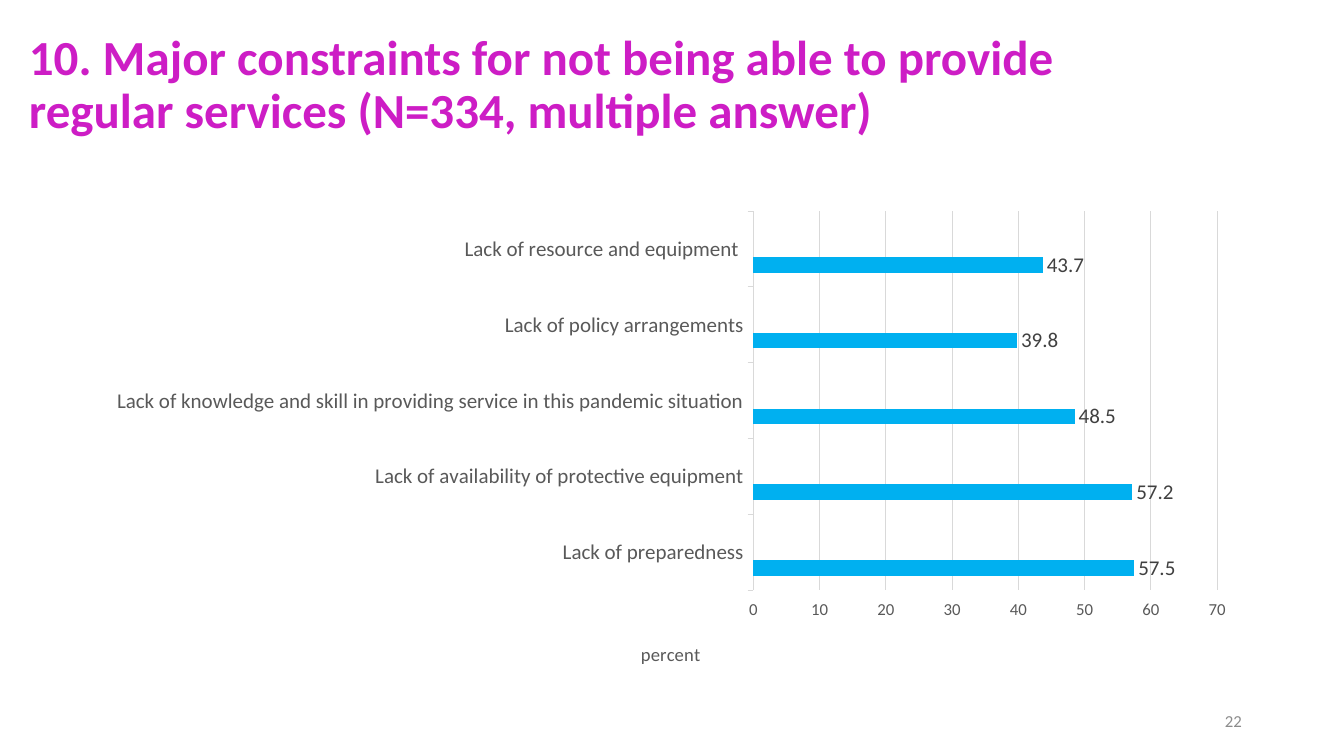
"""Build a slide charting the constraints on providing regular services."""
from dataclasses import dataclass

from lxml.etree import SubElement
from pptx import Presentation
from pptx.chart.data import CategoryChartData as ChartData
from pptx.dml.color import RGBColor
from pptx.enum.chart import XL_CHART_TYPE as ChartType
from pptx.enum.chart import XL_LABEL_POSITION as LabelPosition
from pptx.enum.chart import XL_TICK_MARK as TickMark
from pptx.enum.text import MSO_ANCHOR as Anchor
from pptx.enum.text import PP_ALIGN as Align
from pptx.oxml.ns import qn
from pptx.util import Cm, Pt

FONT = "Calibri"
COLORS = {
    "heading": "CD1DC5", "axis": "595959", "grid": "D9D9D9",
    "label": "404040", "page": "8C8C8C",
    "Series 1": "00B0F0", "Series 2": "ED7D31", "Series 3": "A5A5A5",
}
CONSTRAINTS = {
    "Lack of preparedness": 57.5,
    "Lack of availability of protective equipment": 57.2,
    "Lack of knowledge and skill in providing service in this pandemic situation": 48.5,
    "Lack of policy arrangements": 39.8,
    "Lack of resource and equipment ": 43.7,
}


@dataclass(frozen=True)
class Caption:
    text: str
    left: float
    top: float
    width: float
    height: float
    size: float
    color: str
    bold: bool = False
    align: Align = Align.LEFT
    spacing: float = 1.0


CAPTIONS = [
    Caption("10. Major constraints for not being able to provide regular services "
            "(N=334, multiple answer)", 0.48, 0.33, 29.21, 3.68, 35, "heading",
            bold=True, spacing=0.9),
    Caption("22", 23.93, 17.65, 7.62, 1.02, 12, "page", align=Align.RIGHT),
]


def rgb(name: str) -> RGBColor:
    return RGBColor.from_string(COLORS[name])


def style_font(font, size: float, color: str, bold: bool = False) -> None:
    font.name, font.size, font.bold = FONT, Pt(size), bold
    font.color.rgb = rgb(color)


def style_line(line, color: str) -> None:
    line.width = Pt(0.75)
    line.color.rgb = rgb(color)


def add_caption(slide, caption: Caption) -> None:
    box = slide.shapes.add_textbox(Cm(caption.left), Cm(caption.top),
                                   Cm(caption.width), Cm(caption.height))
    frame = box.text_frame
    frame.word_wrap = True
    frame.vertical_anchor = Anchor.MIDDLE
    paragraph = frame.paragraphs[0]
    paragraph.alignment = caption.align
    paragraph.line_spacing = caption.spacing
    run = paragraph.add_run()
    run.text = caption.text
    style_font(run.font, caption.size, caption.color, caption.bold)


def place(element, position: int, **settings) -> None:
    for old in element.findall(qn("c:layout")):
        element.remove(old)
    layout = SubElement(element, qn("c:layout"))
    manual = SubElement(layout, qn("c:manualLayout"))
    for tag, value in settings.items():
        SubElement(manual, qn(f"c:{tag}")).set("val", str(value))
    element.insert(position, layout)


def add_constraints_chart(slide) -> None:
    data = ChartData()
    data.categories = list(CONSTRAINTS)
    data.add_series("Series 1", list(CONSTRAINTS.values()))
    for name in ("Series 2", "Series 3"):
        data.add_series(name, [None] * len(CONSTRAINTS))
    chart = slide.shapes.add_chart(ChartType.BAR_CLUSTERED, Cm(2.34), Cm(5.08),
                                   Cm(29.21), Cm(12.09), data).chart
    chart.has_legend = False
    chart.has_title = False
    chart.font.name, chart.font.size = FONT, Pt(10)

    plot = chart.plots[0]
    plot.gap_width = 182
    plot.vary_by_categories = False
    for series in plot.series:
        series.format.fill.solid()
        series.format.fill.fore_color.rgb = rgb(series.name)
    labels = plot.series[0].data_labels
    labels.show_value = True
    labels.position = LabelPosition.OUTSIDE_END
    style_font(labels.font, 15, "label")

    constraint_axis, percent_axis = chart.category_axis, chart.value_axis
    for axis, size in ((constraint_axis, 15), (percent_axis, 12)):
        axis.major_tick_mark = TickMark.OUTSIDE
        style_font(axis.tick_labels.font, size, "axis")
    style_line(constraint_axis.format.line, "grid")
    percent_axis.format.line.fill.background()
    percent_axis.minimum_scale, percent_axis.maximum_scale = 0, 70
    percent_axis.major_unit = 10
    style_line(percent_axis.major_gridlines.format.line, "grid")

    percent_title = percent_axis.axis_title.text_frame
    run = percent_title.paragraphs[0].add_run()
    run.text = "percent"
    style_font(run.font, 13.3, "axis")

    chart_root = plot.series[0].format.fill and chart.element
    place(next(chart_root.iter(qn("c:plotArea"))), 0, layoutTarget="inner",
          xMode="edge", yMode="edge", x=0.57, y=0.02, w=0.4, h=0.79)
    place(next(chart_root.iter(qn("c:title"))), 1,
          xMode="edge", yMode="edge", x=0.47, y=0.91)


def main() -> None:
    deck = Presentation()
    deck.slide_width, deck.slide_height = Cm(33.87), Cm(19.05)
    slide = deck.slides.add_slide(deck.slide_layouts[6])
    add_constraints_chart(slide)
    for caption in CAPTIONS:
        add_caption(slide, caption)
    deck.save("out.pptx")


if __name__ == "__main__":
    main()
